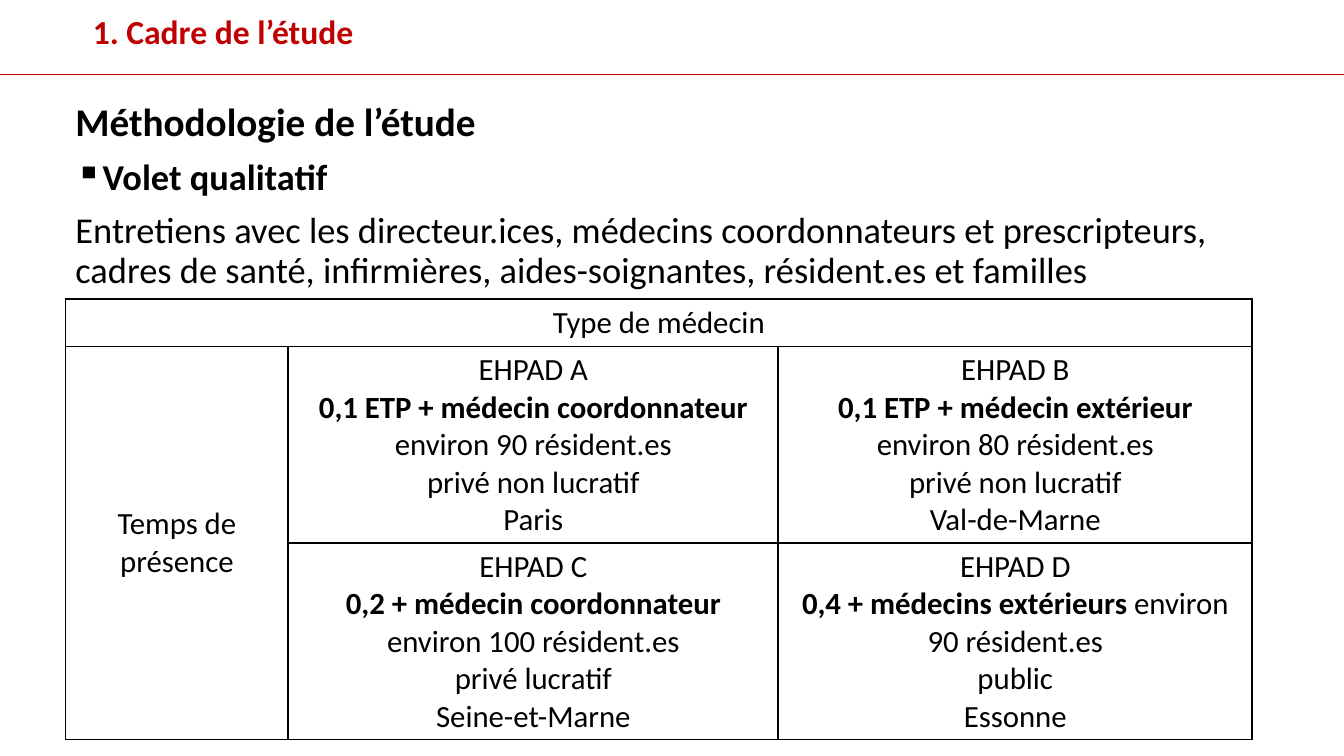
"""Build the study methodology slide with its table of care homes."""
import pptx
import pptx.dml.color
import pptx.enum.text
import pptx.oxml
import pptx.oxml.ns
import pptx.util

Inches, Pt = pptx.util.Inches, pptx.util.Pt
RGB = pptx.dml.color.RGBColor
PP_ALIGN = pptx.enum.text.PP_ALIGN
MIDDLE = pptx.enum.text.MSO_ANCHOR.MIDDLE
THEME = {
    "font": "Calibri",
    "red": RGB(0xC0, 0x00, 0x00),
    "black": RGB(0x00, 0x00, 0x00),
    "title": 24,
    "heading": 28,
    "body": 26,
    "table": 22,
}


def add_run(p, text, size, bold=False, color="black"):
    """Add one formatted run to a paragraph."""
    r = p.add_run()
    r.text = text
    r.font.name = THEME["font"]
    r.font.size = Pt(THEME[size])
    r.font.bold = bold
    r.font.color.rgb = THEME[color]


def fill_cell(cell, lines):
    """Write centred paragraphs, each a list of (text, bold) runs."""
    tf = cell.text_frame
    for i, runs in enumerate(lines):
        p = tf.paragraphs[0] if i == 0 else tf.add_paragraph()
        p.alignment = PP_ALIGN.CENTER
        for text, bold in runs:
            add_run(p, text, "table", bold)


prs = pptx.Presentation()
prs.slide_width, prs.slide_height = Inches(13.33), Inches(7.5)
s = prs.slides.add_slide(prs.slide_layouts[5])

title = s.shapes.title
title.left, title.top = Inches(-0.18), Inches(-0.08)
title.width, title.height = Inches(13.71), Inches(0.82)
title.line.color.rgb = THEME["red"]
title.line.width = Pt(1.25)
tf = title.text_frame
tf.vertical_anchor = MIDDLE
tf.margin_left = Inches(1.1)
p = tf.paragraphs[0]
p.alignment = PP_ALIGN.LEFT
p.line_spacing = 0.9
add_run(p, "1. Cadre de l’étude", "title", True, "red")

body = s.shapes.add_textbox(Inches(0.65), Inches(0.97), Inches(11.77), Inches(5.78))
tf = body.text_frame
tf.word_wrap = True
paragraphs = [
    ("Méthodologie de l’étude", "heading", True, None),
    ("Volet qualitatif", "body", True, "▪"),
    ("Entretiens avec les directeur.ices, médecins coordonnateurs et prescripteurs, "
     "cadres de santé, infirmières, aides-soignantes, résident.es et familles",
     "body", False, None),
]
for i, (text, size, bold, bullet) in enumerate(paragraphs):
    p = tf.paragraphs[0] if i == 0 else tf.add_paragraph()
    p.line_spacing = 0.9
    p.space_before = Pt(10)
    add_run(p, text, size, bold)
    if bullet:
        pPr = p._p.get_or_add_pPr()
        pPr.set("marL", str(Inches(0.25)))
        pPr.set("indent", str(Inches(-0.25)))
        bu = pptx.oxml.parse_xml(
            f'<a:buChar {pptx.oxml.ns.nsdecls("a")} char="{bullet}"/>')
        pPr.append(bu)

widths, heights = [2.21, 4.86, 4.7], [0.45, 1.95, 1.95]
frame = s.shapes.add_table(3, 3, Inches(0.65), Inches(2.97),
                           Inches(sum(widths)), Inches(sum(heights)))
table = frame.table
table.first_row = table.horz_banding = False
for column, width in zip(table.columns, widths):
    column.width = Inches(width)
for row, height in zip(table.rows, heights):
    row.height = Inches(height)

for cell in table.iter_cells():
    tcPr = cell._tc.get_or_add_tcPr()
    for side in ("lnL", "lnR", "lnT", "lnB"):
        tcPr.append(pptx.oxml.parse_xml(
            f'<a:{side} {pptx.oxml.ns.nsdecls("a")} w="{Pt(1.5)}"><a:solidFill>'
            f'<a:srgbClr val="{THEME["black"]}"/></a:solidFill></a:{side}>'))
    cell.fill.background()

table.cell(0, 0).merge(table.cell(0, 2))
table.cell(1, 0).merge(table.cell(2, 0))
table.cell(1, 0).vertical_anchor = MIDDLE
fill_cell(table.cell(0, 0), [[("Type de médecin", False)]])
fill_cell(table.cell(1, 0), [[("Temps de présence", False)]])

homes = {
    (1, 1): ("EHPAD A", "0,1 ETP + médecin coordonnateur", "environ 90 résident.es",
             "privé non lucratif", "Paris"),
    (1, 2): ("EHPAD B", "0,1 ETP + médecin extérieur ", "environ 80 résident.es",
             "privé non lucratif", "Val-de-Marne"),
    (2, 1): ("EHPAD C", "0,2 + médecin coordonnateur", "environ 100 résident.es",
             "privé lucratif", "Seine-et-Marne"),
    (2, 2): ("EHPAD D", "0,4 + médecins extérieurs ", "environ 90 résident.es",
             "public", "Essonne"),
}
for (row, col), (name, doctor, residents, status, place) in homes.items():
    staffing, size = (doctor, True), (residents, False)
    middle = [[staffing, size]] if doctor.endswith(" ") else [[staffing], [size]]
    fill_cell(table.cell(row, col),
              [[(name, False)], *middle, [(status, False)], [(place, False)]])

prs.save("out.pptx")
